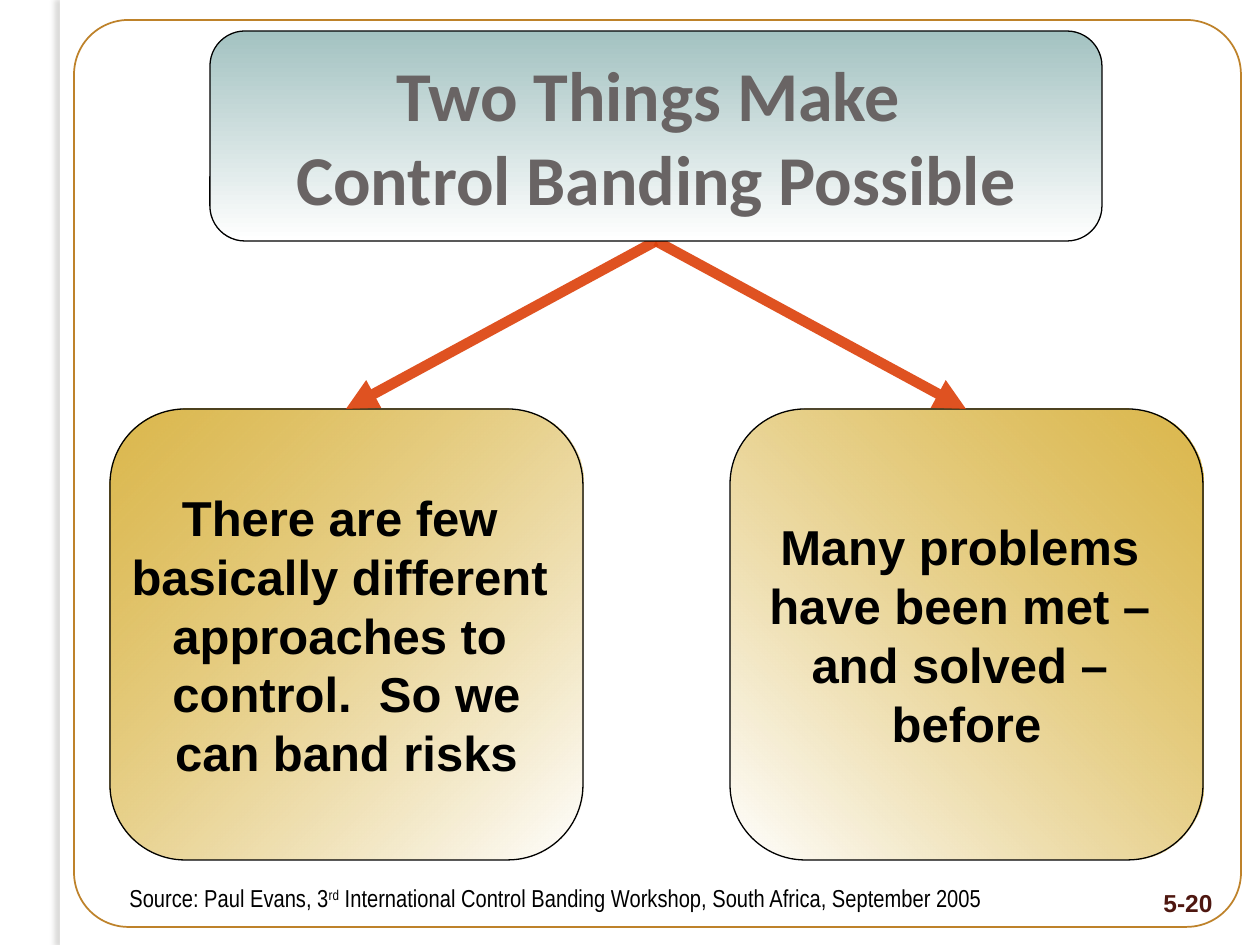
"""Build the slide on the two things that make control banding possible."""
from dataclasses import dataclass

from lxml import etree
from pptx import Presentation
from pptx.dml.color import RGBColor
from pptx.enum.shapes import MSO_CONNECTOR, MSO_SHAPE
from pptx.enum.text import MSO_ANCHOR, PP_ALIGN
from pptx.oxml.ns import qn
from pptx.util import Emu, Pt

RECTANGLE = MSO_SHAPE.RECTANGLE
ROUNDED = MSO_SHAPE.ROUNDED_RECTANGLE
STRAIGHT = MSO_CONNECTOR.STRAIGHT
TOP, MIDDLE = MSO_ANCHOR.TOP, MSO_ANCHOR.MIDDLE
LEFT, CENTER, RIGHT = PP_ALIGN.LEFT, PP_ALIGN.CENTER, PP_ALIGN.RIGHT
PX_PER_INCH = 126


@dataclass(frozen=True)
class Style:
    size: int
    font: str
    color: str
    bold: bool = True


@dataclass(frozen=True)
class Theme:
    white: str = "FFFFFF"
    outline: str = "000000"
    frame: str = "B77513"
    shade: str = "74726D"
    arrow: str = "DC4009"
    gold: str = "CC9900"
    teal: str = "A3C2C1"
    gold_alpha: int = 70
    line_alpha: int = 90
    outline_width: float = 0.75
    frame_width: float = 1
    arrow_width: float = 6
    title: Style = Style(40, "Calibri", "696464")
    card: Style = Style(28, "Arial", "000000")
    number: Style = Style(14, "Arial", "4E1710")
    source: Style = Style(14, "Arial Narrow", "000000", False)


THEME = Theme()


@dataclass(frozen=True)
class Area:
    left: int
    top: int
    width: int
    height: int

    @property
    def middle(self) -> int:
        return self.left + self.width // 2

    @property
    def bottom(self) -> int:
        return self.top + self.height

    def emu(self) -> tuple:
        return tuple(map(px, (self.left, self.top, self.width, self.height)))


@dataclass(frozen=True)
class Stop:
    color: str
    alpha: int = 100


@dataclass(frozen=True)
class Card:
    area: Area
    stops: tuple
    angle: int
    lines: tuple


GOLD, WHITE, TEAL = Stop(THEME.gold, THEME.gold_alpha), Stop(THEME.white), Stop(THEME.teal)
TITLE = Area(210, 31, 892, 210)
CARDS = (
    Card(Area(110, 409, 473, 451), (GOLD, WHITE), 45,
         ("There are few ", "basically different ", "approaches to ",
          "control.  So we", "can band risks")),
    Card(Area(730, 409, 473, 451), (WHITE, GOLD), 315,
         ("Many problems ", "have been met – ", "and solved – ", "before")),
)


def px(length: int) -> Emu:
    return Emu(round(length * 914400 / PX_PER_INCH))


def set_alpha(parent, percent: int) -> None:
    for color in parent.iter(qn("a:srgbClr")):
        etree.SubElement(color, qn("a:alpha"), val=str(percent * 1000))


def set_line(line, color: str, width: float, alpha: int = 100) -> None:
    line.color.rgb = RGBColor.from_string(color)
    line.width = Pt(width)
    if alpha < 100:
        set_alpha(line._get_or_add_ln(), alpha)


def add_plain_shape(page, kind, area: Area):
    shape = page.shapes.add_shape(kind, *area.emu())
    shape.shadow.inherit = False
    return shape


def add_strip(page, area: Area) -> None:
    strip = add_plain_shape(page, RECTANGLE, area)
    strip.fill.solid()
    strip.fill.fore_color.rgb = RGBColor.from_string(THEME.white)
    strip.line.fill.background()
    effects = strip._element.spPr.find(qn("a:effectLst"))
    shadow = etree.SubElement(effects, qn("a:outerShdw"), blurRad=str(Pt(3)),
                              dist=str(Pt(3)), dir="10800000", rotWithShape="0")
    etree.SubElement(shadow, qn("a:srgbClr"), val=THEME.shade)
    set_alpha(shadow, 25)


def add_frame(page, area: Area) -> None:
    frame = add_plain_shape(page, ROUNDED, area)
    frame.adjustments[0] = 0.06
    frame.fill.background()
    set_line(frame.line, THEME.frame, THEME.frame_width, THEME.line_alpha)


def add_panel(page, area: Area, stops: tuple, angle: int):
    panel = add_plain_shape(page, ROUNDED, area)
    panel.fill.gradient()
    panel.fill.gradient_angle = 360 - angle
    for target, stop in zip(panel.fill.gradient_stops, stops):
        target.color.rgb = RGBColor.from_string(stop.color)
        if stop.alpha < 100:
            set_alpha(target._gs, stop.alpha)
    set_line(panel.line, THEME.outline, THEME.outline_width)
    return panel


def add_span(para, text: str, style: Style, baseline: int = 0) -> None:
    span = para.add_run()
    span.text = text
    span.font.size = Pt(style.size)
    span.font.name = style.font
    span.font.bold = style.bold
    span.font.color.rgb = RGBColor.from_string(style.color)
    if baseline:
        span._r.get_or_add_rPr().set("baseline", str(baseline * 1000))


def first_para(box, align, anchor, wrap: bool = True):
    frame = box.text_frame
    frame.word_wrap = wrap
    frame.vertical_anchor = anchor
    frame.paragraphs[0].alignment = align
    return frame.paragraphs[0]


def add_card(page, card: Card) -> None:
    box = add_panel(page, card.area, card.stops, card.angle)
    para = first_para(box, CENTER, MIDDLE, wrap=False)
    for index, line in enumerate(card.lines):
        if index:
            para = box.text_frame.add_paragraph()
            para.alignment = CENTER
        add_span(para, line, THEME.card)


def add_arrow(page, start: Area, end: Area) -> None:
    arrow = page.shapes.add_connector(STRAIGHT, px(start.middle), px(start.bottom),
                                      px(end.middle), px(end.top))
    set_line(arrow.line, THEME.arrow, THEME.arrow_width, THEME.line_alpha)
    etree.SubElement(arrow.line._get_or_add_ln(), qn("a:tailEnd"), type="triangle")
    etree.SubElement(arrow._element.spPr, qn("a:effectLst"))


def add_title(page) -> None:
    para = first_para(add_panel(page, TITLE, (TEAL, WHITE), 90), CENTER, MIDDLE)
    add_span(para, "Two Things Make ", THEME.title)
    para.add_line_break()
    add_span(para, "Control Banding Possible", THEME.title)


def main() -> None:
    deck = Presentation()
    deck.slide_width, deck.slide_height = px(1260), px(945)
    page = deck.slides.add_slide(deck.slide_layouts[6])
    add_strip(page, Area(60, 0, 10, 945))
    add_frame(page, Area(74, 20, 1167, 907))
    number = page.shapes.add_textbox(*Area(1137, 882, 88, 37).emu())
    add_span(first_para(number, RIGHT, TOP), "5-20", THEME.number)
    for card in CARDS:
        add_card(page, card)
    source = page.shapes.add_textbox(*Area(117, 877, 935, 42).emu())
    para = first_para(source, LEFT, TOP)
    add_span(para, "Source: Paul Evans, 3", THEME.source)
    add_span(para, "rd", THEME.source, baseline=30)
    add_span(para, " International Control Banding Workshop, South Africa, September 2005",
             THEME.source)
    for card in reversed(CARDS):
        add_arrow(page, TITLE, card.area)
    add_title(page)
    deck.save("out.pptx")


if __name__ == "__main__":
    main()
